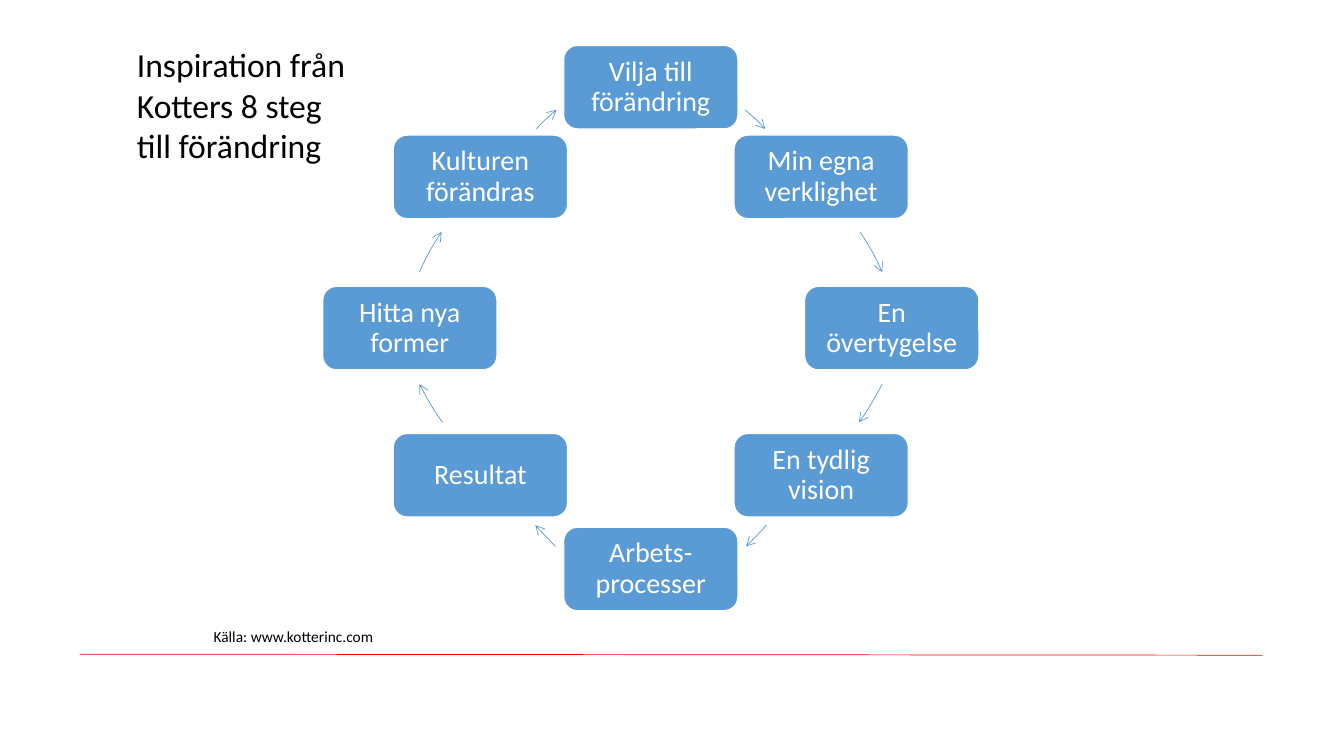
"""Build the slide with the eight-step cycle of change."""
from lxml.etree import SubElement
from pptx import Presentation
from pptx.dml.color import RGBColor as RGB
from pptx.enum.shapes import MSO_CONNECTOR as LINK, MSO_SHAPE as SHAPE
from pptx.enum.text import MSO_ANCHOR as ANCHOR, PP_ALIGN as ALIGN
from pptx.oxml.ns import qn
from pptx.util import Pt

PX = 9144
THEME = {
    "font": "Calibri",
    "blue": RGB(0x5B, 0x9B, 0xD5),
    "white": RGB(0xFF, 0xFF, 0xFF),
    "black": RGB(0, 0, 0),
    "red": RGB(0xFF, 0, 0),
    "title": Pt(24),
    "step": Pt(20),
    "source": Pt(11),
    "thin": Pt(0.5),
    "edge": Pt(1),
}


def px(*nums):
    return [num * PX for num in nums]


def add_run(para, text, size, color):
    run = para.add_run()
    run.text = text
    run.font.name = THEME["font"]
    run.font.size = THEME[size]
    run.font.color.rgb = THEME[color]


deck = Presentation()
deck.slide_width, deck.slide_height = px(1333, 750)
slide = deck.slides.add_slide(deck.slide_layouts[6])
shapes = slide.shapes

rule = shapes.add_connector(LINK.STRAIGHT, *px(79, 649, 1252, 650))
rule.line.color.rgb = THEME["red"]
rule.line.width = THEME["thin"]
SubElement(rule.element.spPr, qn("a:effectLst"))

WIDE, HIGH, MID = 173, 83, 559
STEPS = [
    ("Vilja till förändring", 0, 45),
    ("Min egna verklighet", 169, 134),
    ("En övertygelse", 239, 284),
    ("En tydlig vision", 169, 430),
    ("Arbets-processer", 0, 523),
    ("Resultat", -169, 430),
    ("Hitta nya former", -239, 284),
    ("Kulturen förändras", -169, 134),
]
for text, shift, top in STEPS:
    box = shapes.add_shape(SHAPE.ROUNDED_RECTANGLE, *px(MID + shift, top, WIDE, HIGH))
    box.shadow.inherit = False
    box.fill.solid()
    box.fill.fore_color.rgb = THEME["blue"]
    box.line.color.rgb = THEME["white"]
    box.line.width = THEME["edge"]
    frame = box.text_frame
    frame.word_wrap = True
    frame.vertical_anchor = ANCHOR.MIDDLE
    frame.margin_left, frame.margin_right = px(12, 12)
    frame.margin_top, frame.margin_bottom = px(12, 12)
    para = frame.paragraphs[0]
    para.alignment = ALIGN.CENTER
    para.line_spacing = 0.9
    add_run(para, text, "step", "white")

RING = 478
ARCS = [
    (347, 53, [(739, 109), (746, 115), (753, 121), (759, 128)]),
    (418, 127, [(853, 230), (861, 242), (869, 256), (875, 270)]),
    (421, 38, [(875, 381), (868, 394), (861, 407), (852, 419)]),
    (341, 125, [(760, 521), (754, 528), (747, 535), (740, 542)]),
]
FLIP = 2 * MID + WIDE
mirror = [
    (FLIP - RING - left, top, [(FLIP - x, y) for x, y in reversed(dots)])
    for left, top, dots in reversed(ARCS)
]
for left, top, dots in ARCS + mirror:
    pen = shapes.build_freeform(*px(left, top))
    pen.add_line_segments([px(left + RING, top + RING)], close=False)
    arrow = pen.convert_to_shape()
    arrow.shadow.inherit = False
    arrow.fill.background()
    arrow.line.color.rgb = THEME["blue"]
    arrow.line.width = THEME["thin"]
    props = arrow.element.spPr
    SubElement(props.find(qn("a:ln")), qn("a:tailEnd"), type="arrow")
    route = next(props.iter(qn("a:path")))
    for part in list(route):
        route.remove(part)
    for tag, group in (("a:moveTo", dots[:1]), ("a:cubicBezTo", dots[1:])):
        curve = SubElement(route, qn(tag))
        for x, y in group:
            across, down = px(x - left, y - top)
            SubElement(curve, qn("a:pt"), x=str(across), y=str(down))

NOTES = [
    (["Inspiration från Kotters 8 steg ", "till förändring"], (126, 39, 257, 131), "title"),
    (["Källa: www.kotterinc.com"], (202, 617, 280, 29), "source"),
]
for lines, place, size in NOTES:
    frame = shapes.add_textbox(*px(*place)).text_frame
    frame.word_wrap = True
    para = frame.paragraphs[0]
    for num, line in enumerate(lines):
        if num:
            para.add_line_break()
        add_run(para, line, size, "black")

deck.save("out.pptx")
